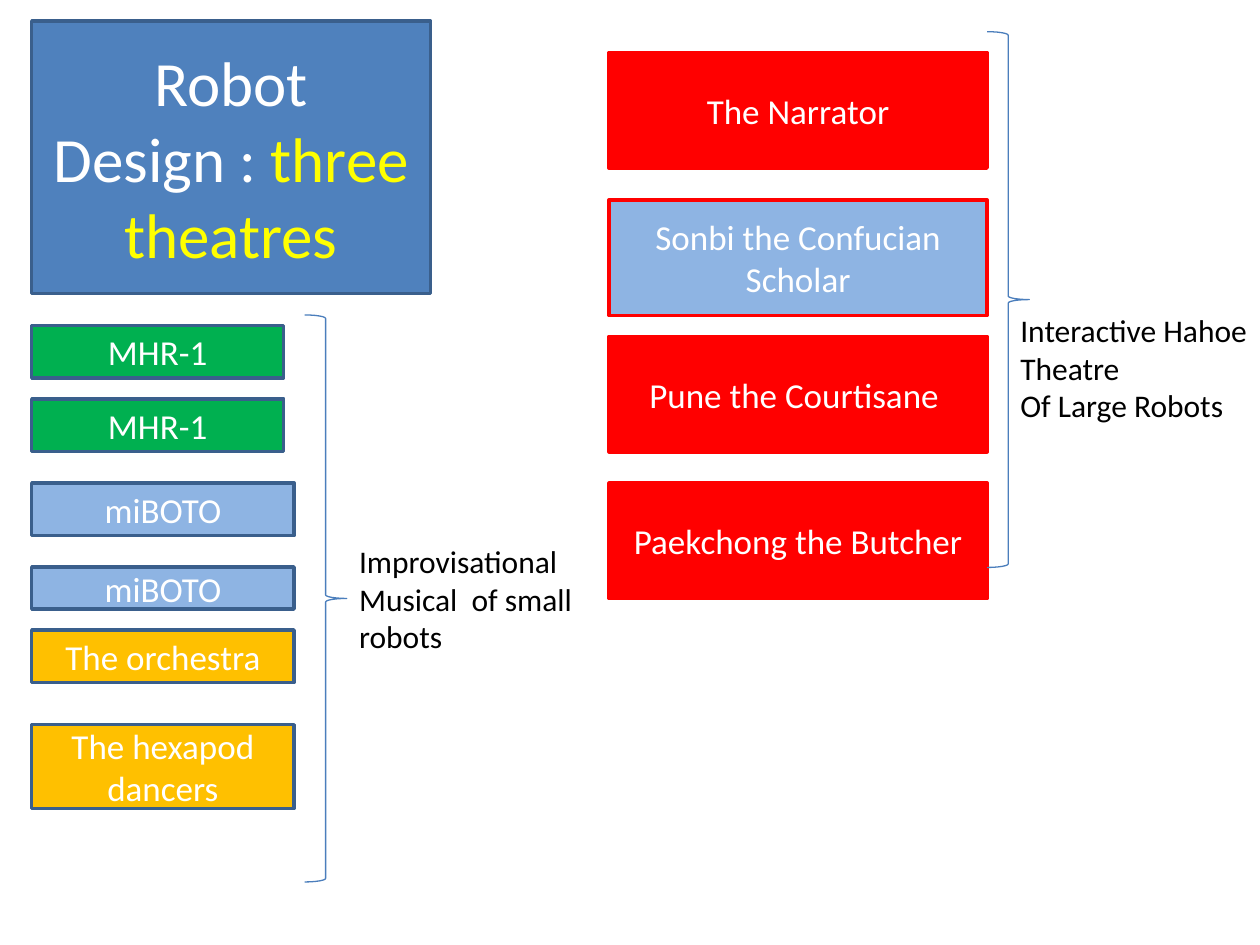
import collections

import pptx
import pptx.dml.color
import pptx.enum.shapes
import pptx.enum.text
import pptx.util

Cm = pptx.util.Cm
Pt = pptx.util.Pt
Kind = pptx.enum.shapes.MSO_SHAPE
Align = pptx.enum.text.PP_ALIGN
Anchor = pptx.enum.text.MSO_ANCHOR
Fit = pptx.enum.text.MSO_AUTO_SIZE

Box = collections.namedtuple("Box", "left top width height")
Row = collections.namedtuple("Row", "text top width height fill edge")

THEME = {
    "font": "Calibri",
    "title": 36, "item": 20, "label": 18,
    "white": "FFFFFF", "black": "000000", "yellow": "FFFF00",
    "blue": "4F81BD", "navy": "3A5F8C", "brace": "4B7EBC",
    "red": "FF0000", "sky": "8EB4E3", "green": "00B050", "gold": "FFC000",
}


def tint(name):
    return pptx.dml.color.RGBColor.from_string(THEME[name])


def assign(target, values):
    for name, value in values.items():
        setattr(target, name, value)


def place(box, left, top, width, height):
    return Box(box.left + left, box.top + top, width, height)


def write(shape, lines, size, align, anchor, fit):
    frame = shape.text_frame
    assign(frame, {"word_wrap": True, "vertical_anchor": anchor, "auto_size": fit})
    for index, line in enumerate(lines):
        para = frame.add_paragraph() if index else frame.paragraphs[0]
        para.alignment = align
        for text, color in line:
            run = para.add_run()
            run.text = text
            assign(run.font, {"name": THEME["font"], "size": Pt(THEME[size])})
            run.font.color.rgb = tint(color)


def draw(slide, kind, box, edge, width):
    shape = slide.shapes.add_shape(kind, *map(Cm, box))
    shape.shadow.inherit = False
    shape.line.color.rgb = tint(edge)
    shape.line.width = Pt(width)
    return shape


def block(slide, box, lines, size, fill, edge):
    shape = draw(slide, Kind.RECTANGLE, box, edge, 2)
    shape.fill.solid()
    shape.fill.fore_color.rgb = tint(fill)
    write(shape, lines, size, Align.CENTER, Anchor.MIDDLE, Fit.NONE)


def brace(slide, box):
    draw(slide, Kind.RIGHT_BRACE, box, "brace", 0.75).fill.background()


def label(slide, box, lines):
    shape = slide.shapes.add_textbox(*map(Cm, box))
    lines = [[(text, "black")] for text in lines]
    write(shape, lines, "label", Align.LEFT, Anchor.TOP, Fit.SHAPE_TO_FIT_TEXT)


def header(slide, box):
    lines = [
        [("Robot", "white")],
        [("Design : ", "white"), ("three theatres", "yellow")],
    ]
    block(slide, box, lines, "title", "blue", "navy")


def stack(slide, box, rows):
    for row in rows:
        spot = place(box, 0, row.top, row.width, row.height)
        block(slide, spot, [[(row.text, "white")]], "item", row.fill, row.edge)


def small(slide, box):
    rows = [
        Row("MHR-1", 0.21, 5.08, 1.06, "green", "navy"),
        Row("MHR-1", 1.69, 5.08, 1.06, "green", "navy"),
        Row("miBOTO", 3.39, 5.29, 1.06, "sky", "navy"),
        Row("miBOTO", 5.08, 5.29, 0.85, "sky", "navy"),
        Row("The orchestra", 6.35, 5.29, 1.06, "gold", "navy"),
        Row("The hexapod dancers", 8.26, 5.29, 1.69, "gold", "navy"),
    ]
    stack(slide, box, rows)
    brace(slide, place(box, 5.5, 0, 0.85, box.height))
    label(slide, place(box, 6.35, 4.45, 5.93, 2.57),
          ["Improvisational", "Musical  of small robots"])


def large(slide, box):
    cast = [
        ("The Narrator", 0.42, "red"),
        ("Sonbi the Confucian Scholar", 3.39, "sky"),
        ("Pune the Courtisane ", 6.14, "red"),
        ("Paekchong the Butcher", 9.1, "red"),
    ]
    rows = [Row(text, top, 7.62, 2.33, fill, "red") for text, top, fill in cast]
    stack(slide, box, rows)
    brace(slide, place(box, 7.62, 0, 0.85, box.height))
    label(slide, place(box, 8.04, 5.5, 5.29, 2.57),
          ["Interactive Hahoe Theatre", "Of Large Robots"])


def main():
    deck = pptx.Presentation()
    assign(deck, {"slide_width": Cm(25.4), "slide_height": Cm(19.05)})
    slide = deck.slides.add_slide(deck.slide_layouts[6])
    header(slide, Box(0.64, 0.42, 8.04, 5.5))
    small(slide, Box(0.64, 6.35, 12.28, 11.43))
    large(slide, Box(12.28, 0.64, 13.33, 10.8))
    deck.save("out.pptx")


if __name__ == "__main__":
    main()
